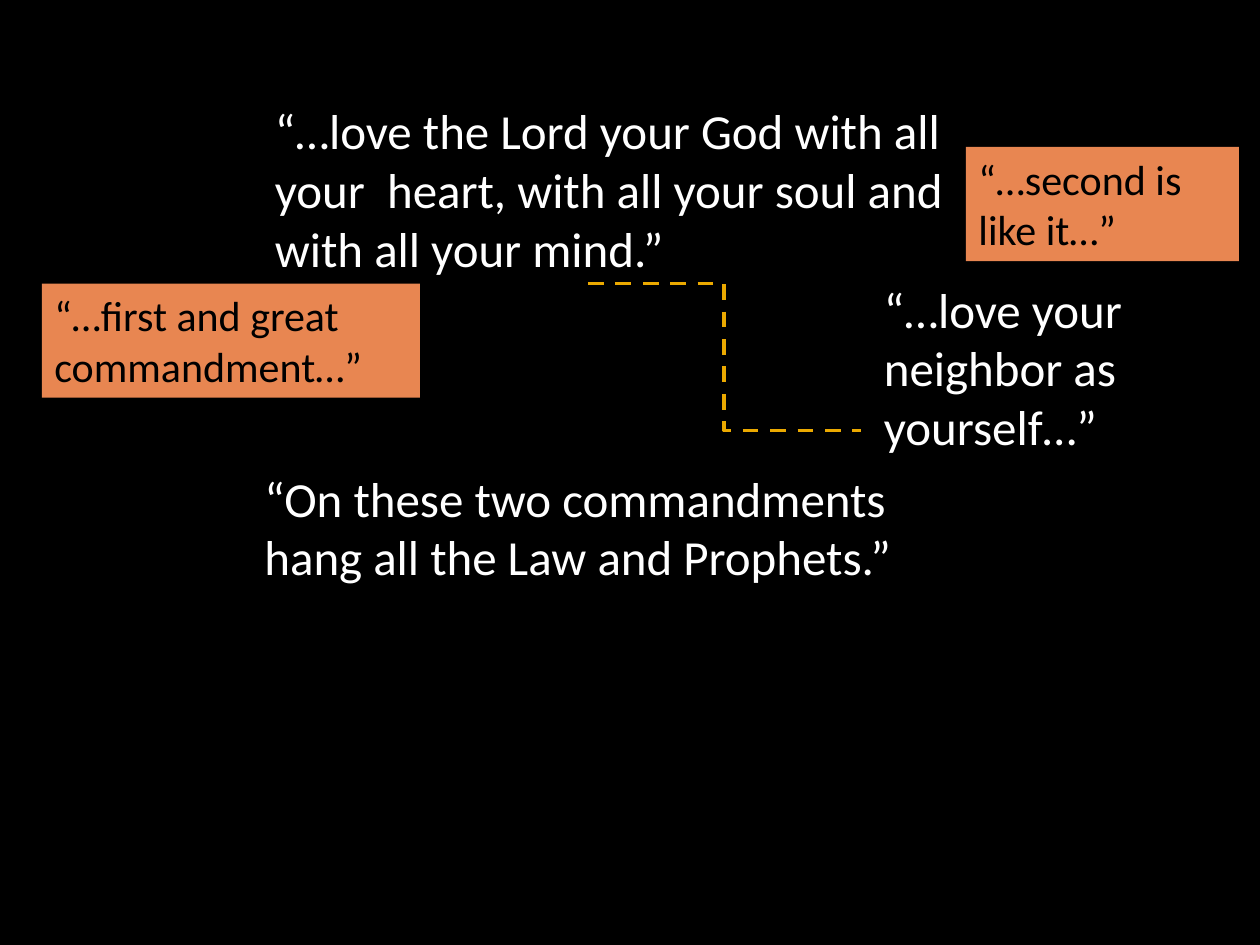
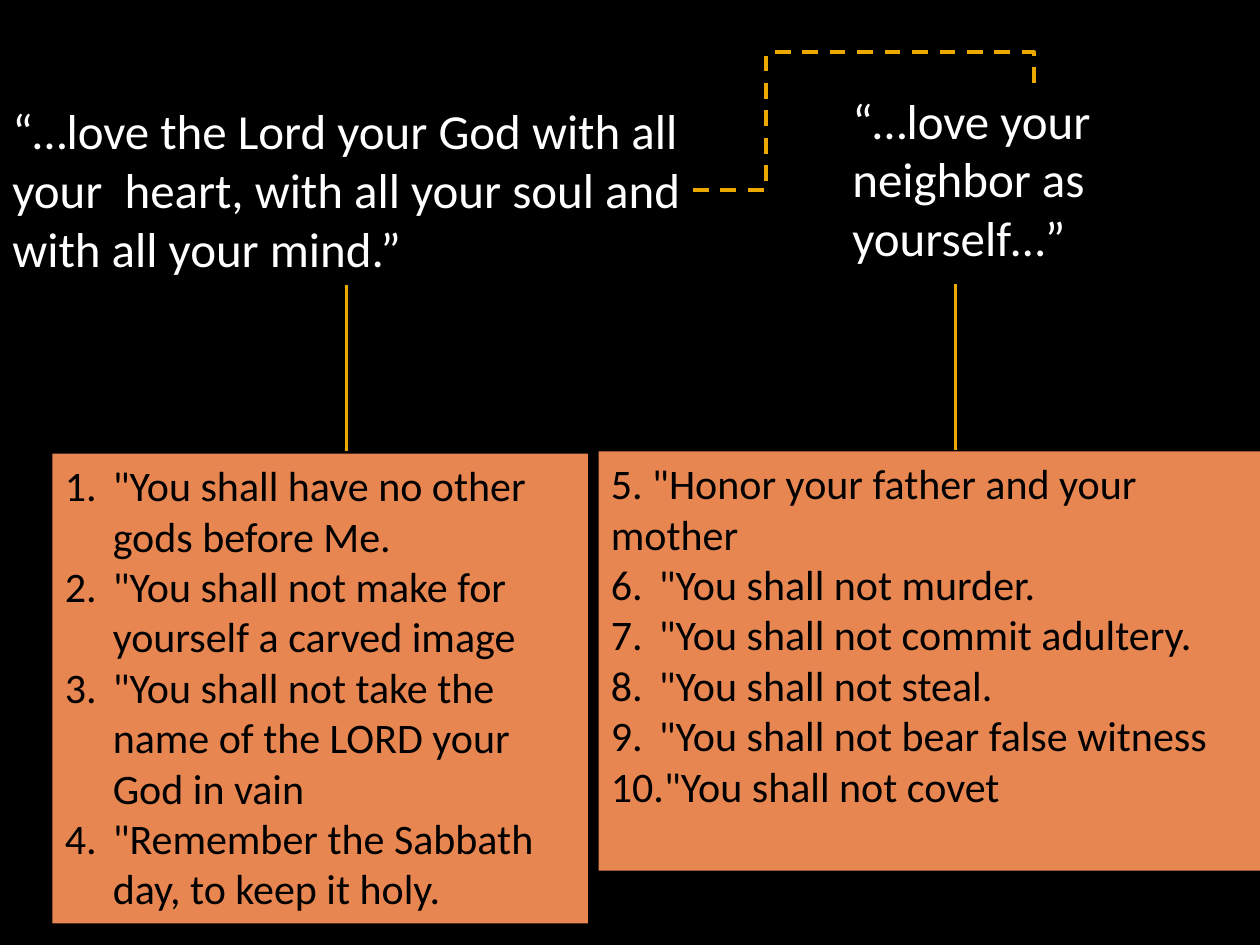
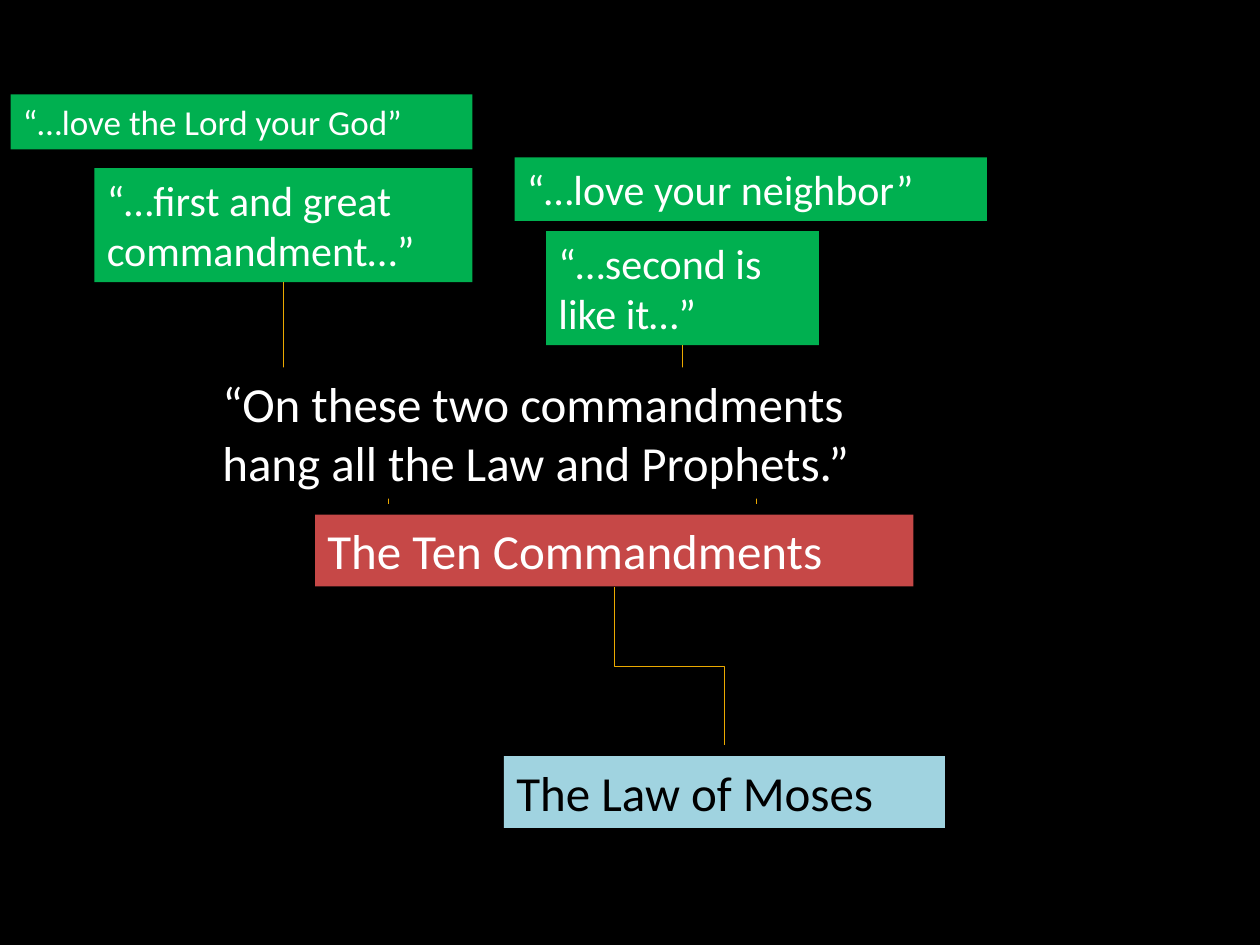
from dataclasses import dataclass
from typing import Any

from lxml import etree
from pptx import Presentation
from pptx.dml.color import RGBColor
from pptx.enum.dml import MSO_LINE
from pptx.enum.shapes import MSO_CONNECTOR, MSO_SHAPE
from pptx.enum.text import MSO_ANCHOR, MSO_AUTO_SIZE, PP_ALIGN
from pptx.oxml.ns import qn
from pptx.util import Inches, Pt

RECT = MSO_SHAPE.RECTANGLE
STRAIGHT, ELBOW = MSO_CONNECTOR.STRAIGHT, MSO_CONNECTOR.ELBOW
DASH = MSO_LINE.DASH
LEFT, TOP = PP_ALIGN.LEFT, MSO_ANCHOR.TOP
GROW = MSO_AUTO_SIZE.SHAPE_TO_FIT_TEXT
BOTTOM_SIDE = 2
SLIDE_W, SLIDE_H = Inches(10), Inches(7.5)
COLS, ROWS = 120, 90


@dataclass(frozen=True)
class Theme:
    """Colours, font, type sizes and line widths of the deck."""
    font: str = "Calibri"
    black: str = "000000"
    white: str = "FFFFFF"
    orange: str = "E88651"
    green: str = "00B050"
    red: str = "C64847"
    blue: str = "A0D3E0"
    gold: str = "EBA900"
    quote: int = 28
    note: int = 24
    small: int = 20
    bold_line: float = 2.25
    thin_line: float = 0.5
    leading: float = 1.21
    indent: float = 0.38


T = Theme()
LOVE_GOD = "“…love the Lord your God with all your  heart, with all your soul and with all your mind.”"
LOVE_NEIGHBOR = "“…love your neighbor as yourself…”"
FIRST = "“…first and great commandment…”"
SECOND = "“…second is like it…”"
HANG_ALL = "“On these two commandments hang all the Law and Prophets.”"
TOWARD_GOD = [
    "\"You shall have no other gods before Me.",
    "\"You shall not make for yourself a carved image",
    "\"You shall not take the name of the LORD your God in vain",
    "\"Remember the Sabbath day, to keep it holy.",
]
TOWARD_OTHERS = [
    "\"You shall not murder.",
    "\"You shall not commit adultery.",
    "\"You shall not steal.",
    "\"You shall not bear false witness",
    "\"You shall not covet",
]


def number(p, start):
    """Give a paragraph automatic numbering with a hanging indent."""
    pPr = p._p.get_or_add_pPr()
    pPr.set("marL", str(Inches(T.indent)))
    pPr.set("indent", str(-Inches(T.indent)))
    num = etree.SubElement(pPr, qn("a:buAutoNum"), type="arabicPeriod")
    if start > 1:
        num.set("startAt", str(start))


def write(p, text, size, color, start=None):
    """Write one formatted paragraph, numbered when a start is given."""
    p.alignment = LEFT
    r = p.add_run()
    r.text = text
    r.font.name, r.font.size = T.font, Pt(size)
    r.font.color.rgb = RGBColor.from_string(color)
    if start:
        number(p, start)


@dataclass
class Area:
    """A region of a slide whose parts are placed in grid units from its corner."""
    s: Any
    col: float = 0
    row: float = 0

    def at(self, col, row):
        """Turn a grid point of the region into slide coordinates."""
        return (round((self.col + col) * SLIDE_W / COLS),
                round((self.row + row) * SLIDE_H / ROWS))

    def label(self, col, row, cols, lines, paragraphs,
              size=T.quote, color=T.white, fill=None):
        """Add a text box or filled rectangle as tall as its lines of text."""
        box = (*self.at(col, row), round(cols * SLIDE_W / COLS),
               Pt(lines * size * T.leading) + Inches(0.1))
        if fill:
            sp = self.s.shapes.add_shape(RECT, *box)
            sp.shadow.inherit = False
            sp.fill.solid()
            sp.fill.fore_color.rgb = RGBColor.from_string(fill)
            sp.line.fill.background()
        else:
            sp = self.s.shapes.add_textbox(*box)
        tf = sp.text_frame
        tf.word_wrap, tf.auto_size, tf.vertical_anchor = True, GROW, TOP
        if isinstance(paragraphs, str):
            paragraphs = [(paragraphs, None)]
        for i, (text, start) in enumerate(paragraphs):
            p = tf.add_paragraph() if i else tf.paragraphs[0]
            write(p, text, size, color, start)
        return sp

    def link(self, begin, end, kind=STRAIGHT, width=T.bold_line, dash=None):
        """Add a gold connector between two grid points."""
        c = self.s.shapes.add_connector(kind, *self.at(*begin), *self.at(*end))
        c.line.color.rgb = RGBColor.from_string(T.gold)
        c.line.width = Pt(width)
        if dash:
            c.line.dash_style = dash
        etree.SubElement(c.element.spPr, qn("a:effectLst"))
        return c

    def drop(self, begin, end):
        """Add a thin elbow that leaves and arrives vertically."""
        (x1, y1), (x2, y2) = begin, end
        cx, cy = (x1 + x2) / 2, (y1 + y2) / 2
        dx, dy = (x2 - x1) / 2, (y2 - y1) / 2
        c = self.link((cx + dy, cy - dx), (cx - dy, cy + dx), ELBOW, T.thin_line)
        c.element.spPr.find(qn("a:xfrm")).set("rot", str(270 * 60000))


def detour(c, *shares):
    """Give an elbow connector three bends at the given shares of its box."""
    geom = c.element.spPr.find(qn("a:prstGeom"))
    geom.set("prst", "bentConnector4")
    av = geom.find(qn("a:avLst"))
    if av is None:
        av = etree.SubElement(geom, qn("a:avLst"))
    for i, share in enumerate(shares, 1):
        etree.SubElement(av, qn("a:gd"), name=f"adj{i}",
                         fmla=f"val {round(share * 100000)}")


def two_commandments(a):
    """Lay out both great commandments and the sentence that joins them."""
    note = dict(size=T.note, color=T.black, fill=T.orange)
    a.label(25, 9, 66, 3, LOVE_GOD)
    a.label(4, 27, 36, 2, FIRST, **note)
    a.label(92, 14, 26, 2, SECOND, **note)
    a.label(83, 26, 37, 3, LOVE_NEIGHBOR)
    a.link((56, 27), (82, 41), ELBOW, dash=DASH)
    a.label(24, 44, 68, 2, HANG_ALL)


def tablet(a, cols, lines, paragraphs):
    """Place an orange list of commandments at the corner of a region."""
    a.label(0, 0, cols, lines, paragraphs, T.note, T.black, T.orange)


def ten_commandments(a):
    """Divide the ten commandments between the two great ones."""
    love_god = a.label(0, 9, 66, 3, LOVE_GOD)
    a.label(80, 8, 37, 3, LOVE_NEIGHBOR)
    detour(a.link((66, 18.1), (98.5, 8), ELBOW, dash=DASH), 0.215, 1.297)
    tablet(Area(a.s, a.col + 5, a.row + 43.2), 51, 9,
           [(text, 1) for text in TOWARD_GOD])
    tablet(Area(a.s, a.col + 57, a.row + 43), 63, 8,
           [("5. \"Honor your father and your mother", None)]
           + [(text, 6) for text in TOWARD_OTHERS])
    a.link((33, 27.1), (33, 43)).begin_connect(love_god, BOTTOM_SIDE)
    a.link((91, 27), (91, 42.9))


def law_chain(a):
    """Hang the law on the two great commandments."""
    a.label(1, 9, 44, 1, "“…love the Lord your God”", T.small, fill=T.green)
    a.label(9, 16, 36, 2, FIRST, T.note, fill=T.green)
    a.label(52, 22, 26, 2, SECOND, T.note, fill=T.green)
    a.label(49, 15, 45, 1, "“…love your neighbor”", T.note, fill=T.green)
    a.label(30, 49, 57, 1, "The Ten Commandments", fill=T.red)
    a.label(48, 72, 42, 1, "The Law of Moses", color=T.black, fill=T.blue)
    a.drop((27, 26.9), (37, 48))
    a.drop((65, 32.9), (72, 48))
    a.drop((58.5, 55.9), (69, 71))
    a.label(20, 35, 68, 2, HANG_ALL, fill=T.black)


def main():
    """Build the three slides on a black master and save the deck."""
    prs = Presentation()
    prs.slide_width, prs.slide_height = SLIDE_W, SLIDE_H
    fill = prs.slide_master.background.fill
    fill.solid()
    fill.fore_color.rgb = RGBColor.from_string(T.black)
    blank = prs.slide_layouts[6]
    for build in (two_commandments, ten_commandments, law_chain):
        build(Area(prs.slides.add_slide(blank)))
    prs.save("out.pptx")


if __name__ == "__main__":
    main()
